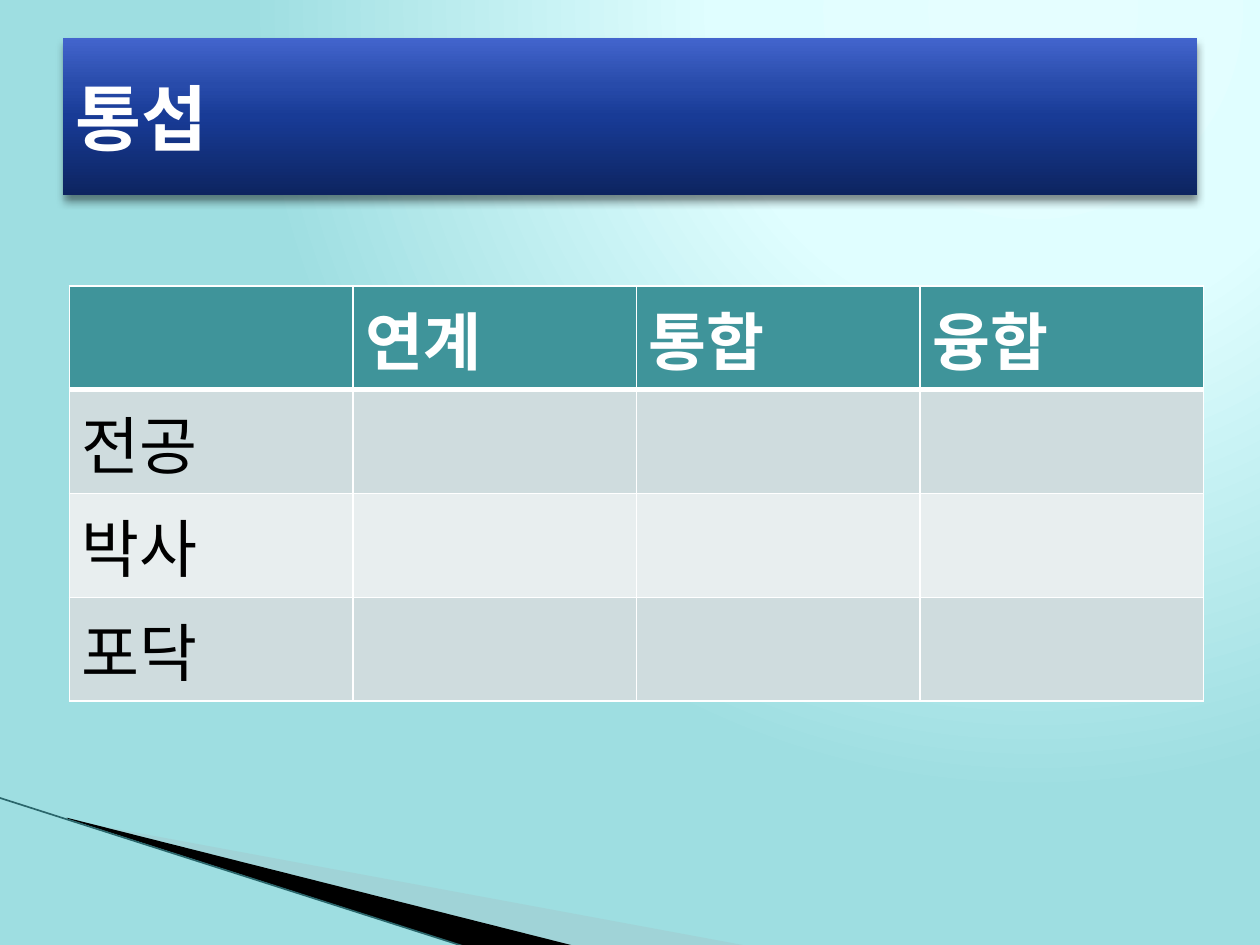
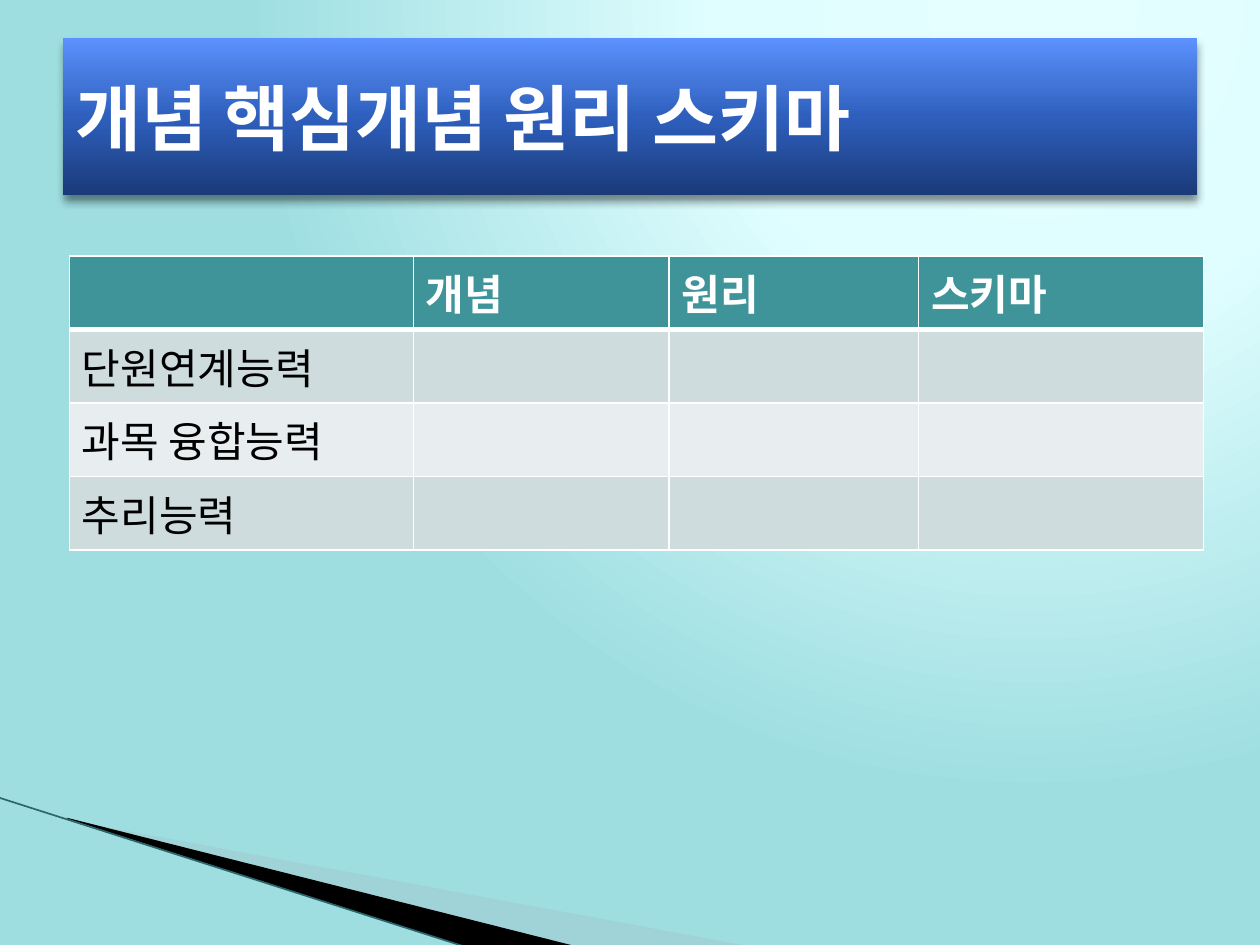
from lxml import etree
from pptx import Presentation, util as u
from pptx.dml.color import RGBColor
from pptx.enum import shapes, text
from pptx.oxml import parse_xml
from pptx.oxml.ns import nsdecls, qn

# Shared style
FONT = "Courier New"
WHITE, BLACK, TEAL = "FFFFFF", "000000", "3F949A"
BANDS = ["CFDCDE", "E8EEEF"]
GLOW = [(0, "E5FEFF"), (40, "E0FEFF"), (100, "9EDEE1")]
RADIAL = ('<a:path path="circle">'
          '<a:fillToRect l="65000" t="0" r="0" b="98000"/></a:path>')
DOWN = '<a:lin ang="16200000" scaled="0"/>'
# Corner wedges, in hundredths of an inch: points, colour, opacity
WEDGES = [
    ([(55, 651), (595, 751), (456, 751), (55, 650)], "A4C4C8", 40),
    ([(53, 649), (457, 751), (372, 752), (54, 650)], BLACK, 100),
]

# Content of each slide
PAGES = [
    dict(title="통섭",
         grad=[(0, "0D2460"), (50, "183B96"), (70, "284BAA"), (100, "4365CD")],
         top=2.27, row=0.7, size=36, cols=[2.25] * 4,
         heads=["연계", "통합", "융합"], sides=["전공", "박사", "포닥"]),
    dict(title="개념 핵심개념 원리 스키마",
         grad=[(0, "1A3A78"), (50, "2E5FBD"), (70, "4174D6"), (100, "5C92FF")],
         top=2.03, row=0.5, size=24, cols=[2.73, 2.03, 1.98, 2.26],
         heads=["개념", "원리", "스키마"],
         sides=["단원연계능력", "과목 융합능력", "추리능력"]),
]


def paint(part, color):
    """Give a fill, or the colour of a font, a hex colour."""
    if hasattr(part, "solid"):
        part.solid()
        part.fore_color.rgb = RGBColor.from_string(color)
    else:
        part.color.rgb = RGBColor.from_string(color)


def blend(props, stops, shade):
    """Swap the solid fill in props for a gradient."""
    marks = "".join(f'<a:gs pos="{pos * 1000}"><a:srgbClr val="{color}"/></a:gs>'
                    for pos, color in stops)
    grad = parse_xml(f'<a:gradFill {nsdecls("a")} rotWithShape="1">'
                     f'<a:gsLst>{marks}</a:gsLst>{shade}</a:gradFill>')
    props.replace(props.find(qn("a:solidFill")), grad)


prs = Presentation()
prs.slide_width, prs.slide_height = u.Inches(10), u.Inches(7.5)

for page in PAGES:
    slide = prs.slides.add_slide(prs.slide_layouts[6])

    # Background glow
    paint(slide.background.fill, WHITE)
    blend(slide.element.find(".//" + qn("p:bgPr")), GLOW, RADIAL)

    # Corner wedges and edge line
    for points, color, alpha in WEDGES:
        path = slide.shapes.build_freeform(*points[0], scale=u.Inches(0.01))
        path.add_line_segments(points[1:], close=True)
        wedge = path.convert_to_shape()
        wedge.shadow.inherit = False
        wedge.line.fill.background()
        paint(wedge.fill, color)
        if alpha < 100:
            tint = wedge.element.spPr.find(".//" + qn("a:srgbClr"))
            etree.SubElement(tint, qn("a:alpha"), val=str(alpha * 1000))
    edge = slide.shapes.add_connector(
        shapes.MSO_CONNECTOR.STRAIGHT, u.Inches(-0.01), u.Inches(6.33),
        u.Inches(3.71), u.Inches(7.52))
    paint(edge.line, "2A666B") if hasattr(edge.line, "solid") else paint(edge.line.fill, "2A666B")
    edge.line.width = u.Pt(0.95)
    etree.SubElement(edge.element.spPr, qn("a:effectLst"))

    # Table
    rows, cols = len(page["sides"]) + 1, len(page["cols"])
    grid = slide.shapes.add_table(
        rows, cols, u.Inches(0.55), u.Inches(page["top"]),
        u.Inches(9), u.Inches(page["row"] * rows)).table
    for col, width in zip(grid.columns, page["cols"]):
        col.width = u.Inches(width)
    words = [[""] + page["heads"]]
    words += [[side] + [""] * (cols - 1) for side in page["sides"]]
    for r, line in enumerate(words):
        for c, word in enumerate(line):
            cell = grid.cell(r, c)
            props = cell._tc.get_or_add_tcPr()
            for side in "LRTB":
                thick = (r, side) in [(0, "B"), (1, "T")]
                props.append(parse_xml(
                    f'<a:ln{side} {nsdecls("a")} w="{u.Pt(3 if thick else 1)}">'
                    f'<a:solidFill><a:srgbClr val="{WHITE}"/></a:solidFill>'
                    f'</a:ln{side}>'))
            paint(cell.fill, BANDS[(r - 1) % 2] if r else TEAL)
            if word:
                run = cell.text_frame.paragraphs[0].add_run()
                run.text = word
                run.font.name, run.font.size = FONT, u.Pt(page["size"])
                run.font.bold = r == 0
                paint(run.font, BLACK if r else WHITE)

    # Title band
    band = slide.shapes.add_shape(
        shapes.MSO_SHAPE.RECTANGLE, u.Inches(0.5), u.Inches(0.3),
        u.Inches(9), u.Inches(1.25))
    band.shadow.inherit = False
    band.line.fill.background()
    paint(band.fill, WHITE)
    blend(band.element.spPr, page["grad"], DOWN)
    band.element.spPr.find(qn("a:effectLst")).append(parse_xml(
        f'<a:outerShdw {nsdecls("a")} blurRad="{u.Pt(5)}" dist="{u.Pt(3)}" '
        f'dir="5400000" rotWithShape="0"><a:srgbClr val="{BLACK}">'
        f'<a:alpha val="45000"/></a:srgbClr></a:outerShdw>'))
    frame = band.text_frame
    frame.word_wrap = True
    frame.vertical_anchor = text.MSO_ANCHOR.MIDDLE
    para = frame.paragraphs[0]
    para.alignment = text.PP_ALIGN.LEFT
    run = para.add_run()
    run.text = page["title"]
    run.font.name, run.font.size, run.font.bold = FONT, u.Pt(41), True
    paint(run.font, WHITE)

prs.save("out.pptx")
